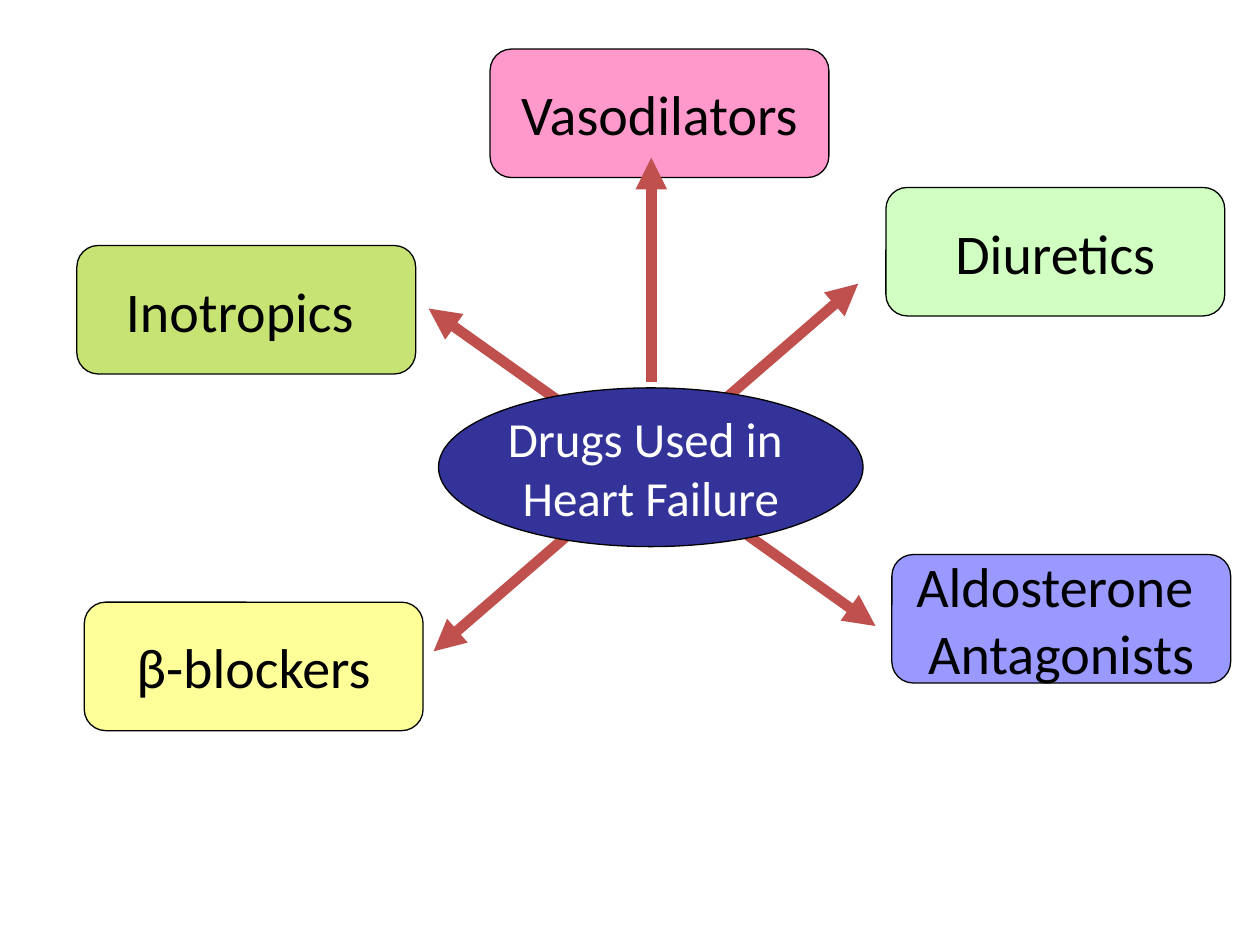
"""Build a hub-and-spoke slide of the drug classes used in heart failure."""
from dataclasses import dataclass

from lxml.etree import SubElement
from pptx import Presentation
from pptx.dml.color import RGBColor
from pptx.enum.shapes import MSO_CONNECTOR, MSO_SHAPE
from pptx.enum.text import MSO_ANCHOR, PP_ALIGN
from pptx.oxml.ns import qn
from pptx.util import Cm, Pt


@dataclass(frozen=True)
class Theme:
    font: str = "Calibri"
    hub_size: float = 28
    class_size: float = 32
    outline_width: float = 0.75
    arrow_width: float = 6
    ink: str = "000000"
    hub_ink: str = "FFFFFF"
    hub: str = "333399"
    arrow: str = "C0504D"
    vasodilators: str = "FF99CC"
    diuretics: str = "66FF33"
    inotropics: str = "99CC00"
    blockers: str = "FFFF99"
    antagonists: str = "0000FF"


def write_text(frame, text, *, font, size, color, align=PP_ALIGN.CENTER):
    frame.word_wrap = False
    frame.vertical_anchor = MSO_ANCHOR.MIDDLE
    frame.text = text
    for para in frame.paragraphs:
        para.alignment = align
        for span in para.runs:
            span.font.name = font
            span.font.size = Pt(size)
            span.font.color.rgb = RGBColor.from_string(color)


class DrugMap:
    def __init__(self, page, theme):
        self.page = page
        self.theme = theme

    def node(self, kind, text, left, top, width, height, fill, size, ink, opacity=100):
        box = self.page.shapes.add_shape(kind, Cm(left), Cm(top), Cm(width), Cm(height))
        box.shadow.inherit = False
        box.fill.solid()
        box.fill.fore_color.rgb = RGBColor.from_string(fill)
        if opacity < 100:
            color = box.fill._xPr.find(qn("a:solidFill"))[0]
            SubElement(color, qn("a:alpha"), val=str(opacity * 1000))
        box.line.color.rgb = RGBColor.from_string(self.theme.ink)
        box.line.width = Pt(self.theme.outline_width)
        write_text(box.text_frame, text, font=self.theme.font, size=size, color=ink)

    def hub(self, text, left, top, width, height):
        self.node(MSO_SHAPE.OVAL, text, left, top, width, height,
                  self.theme.hub, self.theme.hub_size, self.theme.hub_ink)

    def drug_class(self, text, left, top, fill, opacity=100):
        self.node(MSO_SHAPE.ROUNDED_RECTANGLE, text, left, top, 6.83, 2.59,
                  fill, self.theme.class_size, self.theme.ink, opacity)

    def arrow(self, start, end, ends=("tailEnd",)):
        points = [Cm(value) for value in (*start, *end)]
        arrow = self.page.shapes.add_connector(MSO_CONNECTOR.STRAIGHT, *points)
        arrow.line.color.rgb = RGBColor.from_string(self.theme.arrow)
        arrow.line.width = Pt(self.theme.arrow_width)
        outline = arrow.line._get_or_add_ln()
        for end_name in ends:
            SubElement(outline, qn(f"a:{end_name}"), type="triangle")
        SubElement(arrow._element.spPr, qn("a:effectLst"))


def main():
    deck = Presentation()
    deck.slide_width, deck.slide_height = Cm(25.4), Cm(19.05)
    theme = Theme()
    drug_map = DrugMap(deck.slides.add_slide(deck.slide_layouts[6]), theme)

    both_ends = ("headEnd", "tailEnd")
    drug_map.arrow((8.74, 13.13), (17.3, 5.72), both_ends)
    drug_map.arrow((8.64, 6.22), (17.65, 12.62), both_ends)
    drug_map.hub("Drugs Used in \nHeart Failure", 8.84, 7.82, 8.56, 3.2)

    drug_classes = [
        ("Diuretics", 17.86, 3.78, theme.diuretics, 30),
        ("β-blockers", 1.7, 12.14, theme.blockers),
        ("Vasodilators", 9.88, 0.99, theme.vasodilators),
        ("Aldosterone \nAntagonists", 17.98, 11.18, theme.antagonists, 40),
        ("Inotropics ", 1.55, 4.95, theme.inotropics, 55),
    ]
    for drug_class in drug_classes:
        drug_map.drug_class(*drug_class)
    drug_map.arrow((13.13, 7.7), (13.13, 3.18))

    deck.save("out.pptx")


if __name__ == "__main__":
    main()
